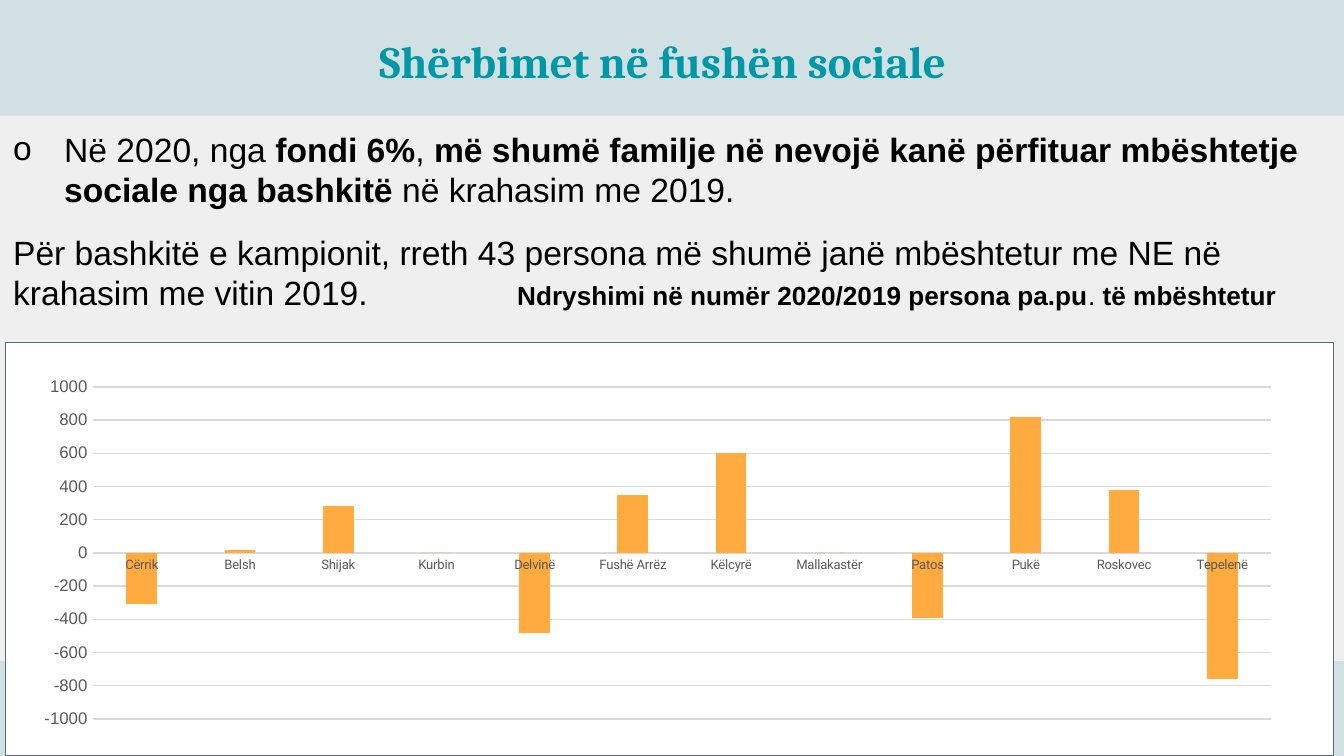
from lxml.etree import SubElement
from pptx import Presentation
from pptx.chart.data import CategoryChartData
from pptx.dml.color import RGBColor
from pptx.enum.chart import XL_CHART_TYPE, XL_TICK_MARK
from pptx.enum.shapes import MSO_SHAPE
from pptx.enum.text import MSO_ANCHOR, PP_ALIGN
from pptx.oxml.ns import qn
from pptx.util import Inches, Pt

PALE_BLUE = RGBColor(0xD0, 0xE0, 0xE3)
PALE_GRAY = RGBColor(0xEF, 0xEF, 0xEF)
WHITE = RGBColor(0xFF, 0xFF, 0xFF)
SLATE = RGBColor(0x58, 0x6D, 0x77)
TEAL = RGBColor(0x00, 0x97, 0xA7)
BLACK = RGBColor(0x00, 0x00, 0x00)
AXIS_GRAY = RGBColor(0x59, 0x59, 0x59)
GRID_GRAY = RGBColor(0xD9, 0xD9, 0xD9)
ORANGE = RGBColor(0xFF, 0xAB, 0x40)

SUPPORTED_CHANGE = {
    "Cërrik": -310, "Belsh": 20, "Shijak": 280, "Kurbin": 0,
    "Delvinë": -480, "Fushë Arrëz": 350, "Këlcyrë": 600, "Mallakastër": 0,
    "Patos": -390, "Pukë": 820, "Roskovec": 380, "Tepelenë": -760,
}
CHART_BOX = (0.14, 2.75, 9.51, 2.72)
PLOT_BOX = (0.69, 2.88, 8.77, 2.47)


def apply_format(target, values):
    for name, value in values.items():
        setattr(target, name, value)


def style_font(font, color, **values):
    apply_format(font, values)
    font.color.rgb = color


def style_line(line, color, width):
    line.color.rgb = color
    line.width = Pt(width)


def add_panel(slide, box, fill, outline=None):
    panel = slide.shapes.add_shape(MSO_SHAPE.RECTANGLE, *map(Inches, box))
    panel.shadow.inherit = False
    panel.fill.solid()
    panel.fill.fore_color.rgb = fill
    if outline:
        style_line(panel.line, outline, 0.25)
    else:
        panel.line.fill.background()


def add_text_frame(slide, box, anchor):
    frame = slide.shapes.add_textbox(*map(Inches, box)).text_frame
    margins = dict.fromkeys(
        ("margin_left", "margin_top", "margin_right", "margin_bottom"), Inches(0.1))
    apply_format(frame, {"word_wrap": True, "vertical_anchor": anchor, **margins})
    return frame


def add_runs(paragraph, runs):
    for text, size, bold in runs:
        run = paragraph.add_run()
        run.text = text
        style_font(run.font, BLACK, name="Arial", size=Pt(size), bold=bold)


def set_bullet(paragraph, character, indent):
    properties = paragraph._p.get_or_add_pPr()
    properties.set("marL", str(Inches(indent)))
    properties.set("indent", str(-Inches(indent)))
    color = SubElement(properties, qn("a:buClr"))
    SubElement(color, qn("a:srgbClr"), val=str(BLACK))
    SubElement(properties, qn("a:buFont"), typeface="Arial")
    SubElement(properties, qn("a:buChar"), char=character)


def set_tab_stop(paragraph, position):
    stops = SubElement(paragraph._p.get_or_add_pPr(), qn("a:tabLst"))
    SubElement(stops, qn("a:tab"), pos=str(Inches(position)), algn="l")


def add_title(slide):
    frame = add_text_frame(slide, (0.04, 0.04, 9.78, 0.82), MSO_ANCHOR.MIDDLE)
    title = frame.paragraphs[0]
    title.text = "Shërbimet në fushën sociale"
    title.alignment = PP_ALIGN.CENTER
    style_font(title.runs[0].font, TEAL, name="Cambria", size=Pt(24), bold=True)


def add_findings(slide):
    frame = add_text_frame(slide, (0, 0.86, 10, 4.76), MSO_ANCHOR.TOP)
    families = frame.paragraphs[0]
    families.space_after = Pt(12)
    set_bullet(families, "o", 0.38)
    add_runs(families, [
        ("Në 2020, nga ", 18, False),
        ("fondi 6%", 18, True),
        (", ", 18, False),
        ("më shumë familje në nevojë kanë përfituar mbështetje sociale nga bashkitë ", 18, True),
        ("në krahasim me 2019.", 18, False),
    ])
    persons = frame.add_paragraph()
    persons.space_after = Pt(6)
    set_tab_stop(persons, 3.75)
    add_runs(persons, [
        ("Për bashkitë e kampionit, rreth 43 persona më shumë janë mbështetur me NE "
         "në krahasim me vitin 2019.\t", 18, False),
        ("Ndryshimi në numër 2020/2019 persona pa.pu", 14, True),
        (". ", 14, False),
        ("të mbështetur", 14, True),
    ])


def style_axis(axis, font_name, size):
    apply_format(axis, {"major_tick_mark": XL_TICK_MARK.NONE,
                        "minor_tick_mark": XL_TICK_MARK.NONE})
    style_font(axis.tick_labels.font, AXIS_GRAY, name=font_name, size=Pt(size))


def set_plot_layout(chart):
    left, top, width, height = CHART_BOX
    plot_left, plot_top, plot_width, plot_height = PLOT_BOX
    shares = {"x": (plot_left - left) / width, "y": (plot_top - top) / height,
              "w": plot_width / width, "h": plot_height / height}
    plot_area = chart._chartSpace.chart.plotArea
    layout = plot_area.find(qn("c:layout"))
    if layout is None:
        layout = SubElement(plot_area, qn("c:layout"))
        plot_area.insert(0, layout)
    manual = SubElement(layout, qn("c:manualLayout"))
    SubElement(manual, qn("c:layoutTarget"), val="inner")
    for mode in ("xMode", "yMode"):
        SubElement(manual, qn(f"c:{mode}"), val="edge")
    for side, share in shares.items():
        SubElement(manual, qn(f"c:{side}"), val=f"{share:.4f}")


def add_change_chart(slide):
    data = CategoryChartData()
    data.categories = list(SUPPORTED_CHANGE)
    data.add_series("Series 1", list(SUPPORTED_CHANGE.values()))
    chart = slide.shapes.add_chart(
        XL_CHART_TYPE.COLUMN_CLUSTERED, *map(Inches, CHART_BOX), data).chart
    apply_format(chart, {"has_legend": False, "has_title": False})
    style_font(chart.font, BLACK, name="Arial", size=Pt(10))
    set_plot_layout(chart)

    municipalities, persons = chart.category_axis, chart.value_axis
    style_axis(municipalities, "Roboto", 7)
    style_line(municipalities.format.line, GRID_GRAY, 0.75)
    style_axis(persons, "Arial", 9)
    apply_format(persons, {"minimum_scale": -1000, "maximum_scale": 1000,
                           "major_unit": 200, "has_major_gridlines": True})
    persons.format.line.fill.background()
    style_line(persons.major_gridlines.format.line, GRID_GRAY, 0.75)

    columns = chart.plots[0]
    apply_format(columns, {"gap_width": 219, "overlap": -27,
                           "vary_by_categories": False})
    change = columns.series[0]
    change.invert_if_negative = False
    change.format.fill.solid()
    change.format.fill.fore_color.rgb = ORANGE


def main():
    presentation = Presentation()
    width = Inches(10)
    apply_format(presentation, {"slide_width": width, "slide_height": width * 9 // 16})
    slide = presentation.slides.add_slide(presentation.slide_layouts[6])
    slide.background.fill.solid()
    slide.background.fill.fore_color.rgb = PALE_BLUE
    add_panel(slide, (0, 0.86, 10, 4.06), PALE_GRAY)
    add_title(slide)
    add_findings(slide)
    add_panel(slide, (0.04, 2.55, 9.88, 3.07), WHITE, SLATE)
    add_change_chart(slide)
    presentation.save("out.pptx")


if __name__ == "__main__":
    main()
